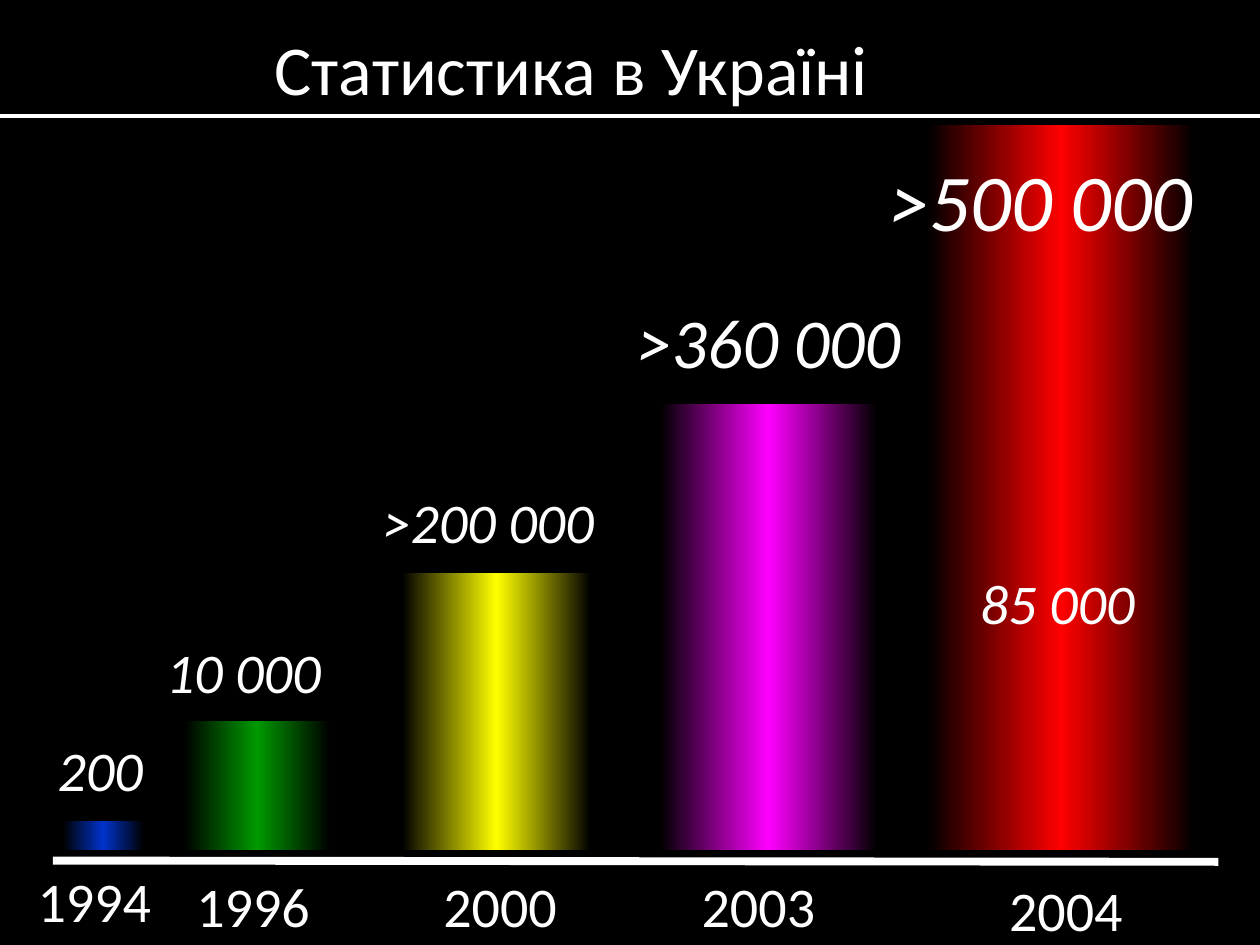
from copy import deepcopy

from lxml import etree
from pptx import Presentation
from pptx.dml.color import RGBColor
from pptx.enum.shapes import MSO_CONNECTOR, MSO_SHAPE
from pptx.enum.text import PP_ALIGN
from pptx.oxml.ns import qn
from pptx.util import Inches, Pt

RECTANGLE = MSO_SHAPE.RECTANGLE
STRAIGHT = MSO_CONNECTOR.STRAIGHT
LEFT, CENTER = PP_ALIGN.LEFT, PP_ALIGN.CENTER

COLORS = {
    "black": "000000", "white": "FFFFFF", "blue": "0033CC", "green": "009900",
    "yellow": "FFFF00", "magenta": "FF00FF", "red": "FF0000",
}
FONT = "Calibri"
BASELINE = 6.75  # bottom edge of every bar

# Content: left, top, width and color of each bar
BARS = [
    (0.5, 6.51, 0.64, "blue"),
    (1.46, 5.72, 1.16, "green"),
    (3.19, 4.54, 1.5, "yellow"),
    (5.24, 3.2, 1.72, "magenta"),
    (7.36, 0.99, 2.12, "red"),
]
# Content: year, left, top
YEARS = [
    ("1994", 0.2, 6.83),
    ("1996", 1.46, 6.87),
    ("2000", 3.42, 6.87),
    ("2003", 5.47, 6.87),
    ("2004", 7.91, 6.9),
]
# Content: text, left, top, width, height, size, alignment
VALUES = [
    ("200", 0.36, 5.79, 0.94, 0.63, 32, LEFT),
    ("10 000", 1.22, 5.01, 1.56, 0.63, 32, LEFT),
    (">200 000", 2.94, 3.82, 2.06, 0.63, 32, LEFT),
    (">360 000", 4.76, 2.32, 2.68, 0.77, 40, CENTER),
    (">500 000", 6.73, 1.15, 3.07, 0.87, 46, CENTER),
    ("85 000", 7.68, 4.46, 1.56, 0.63, 32, LEFT),
]
SHADOWED_VALUE = ">500 000"
# Content: start x, start y, end x, end y, width in points
LINES = [
    (0, 0.92, 10, 0.92, 2.25),
    (0.42, 6.83, 9.67, 6.84, 4.5),
]


def color(name):
    return RGBColor.from_string(COLORS[name])


def add_rectangle(slide, left, top, width, height):
    shape = slide.shapes.add_shape(
        RECTANGLE, Inches(left), Inches(top), Inches(width), Inches(height))
    shape.shadow.inherit = False
    shape.line.color.rgb = color("black")
    shape.line.width = Pt(0.75)
    return shape


def add_bar(slide, left, top, width, color_name):
    bar = add_rectangle(slide, left, top, width, BASELINE - top)
    bar.fill.gradient()
    bar.fill.gradient_angle = 0
    stop_list = bar._element.spPr.find(qn("a:gradFill")).find(qn("a:gsLst"))
    stop_list.insert(1, deepcopy(stop_list[0]))
    stops = zip(bar.fill.gradient_stops, (0, 0.5, 1), ("black", color_name, "black"))
    for stop, position, name in stops:
        stop.position = position
        stop.color.rgb = color(name)


def add_line(slide, start_x, start_y, end_x, end_y, width):
    line = slide.shapes.add_connector(
        STRAIGHT, Inches(start_x), Inches(start_y), Inches(end_x), Inches(end_y))
    line.line.color.rgb = color("white")
    line.line.width = Pt(width)
    etree.SubElement(line._element.spPr, qn("a:effectLst"))


def add_text(slide, text, left, top, width, height, size, alignment=LEFT, italic=False):
    box = slide.shapes.add_textbox(
        Inches(left), Inches(top), Inches(width), Inches(height))
    box.text_frame.word_wrap = True
    box.text_frame.text = text
    paragraph = box.text_frame.paragraphs[0]
    paragraph.alignment = alignment
    run = paragraph.runs[0]
    run.font.name = FONT
    run.font.size = Pt(size)
    run.font.italic = italic
    run.font.color.rgb = color("white")
    return run


def add_text_shadow(run):
    properties = run._r.get_or_add_rPr()
    effects = etree.Element(qn("a:effectLst"))
    shadow = etree.SubElement(
        effects, qn("a:outerShdw"), blurRad="0", dist="38100", dir="2700000")
    etree.SubElement(shadow, qn("a:srgbClr"), val=COLORS["black"])
    properties.find(qn("a:solidFill")).addnext(effects)


def main():
    presentation = Presentation()
    presentation.slide_width = Inches(10)
    presentation.slide_height = Inches(7.5)
    slide = presentation.slides.add_slide(presentation.slide_layouts[6])

    # Black backdrop and title
    backdrop = add_rectangle(slide, 0, 0, 10, 7.5)
    backdrop.fill.solid()
    backdrop.fill.fore_color.rgb = color("black")
    add_text(slide, "Статистика в Україні", 2.08, 0.15, 5.88, 0.77, 40)

    # Title rule, axis and bars
    for line in LINES:
        add_line(slide, *line)
    for bar in BARS:
        add_bar(slide, *bar)

    # Year and value labels
    for year, left, top in YEARS:
        add_text(slide, year, left, top, 1.19, 0.63, 32)
    for value in VALUES:
        run = add_text(slide, *value, italic=True)
        if run.text == SHADOWED_VALUE:
            add_text_shadow(run)

    presentation.save("out.pptx")


if __name__ == "__main__":
    main()
